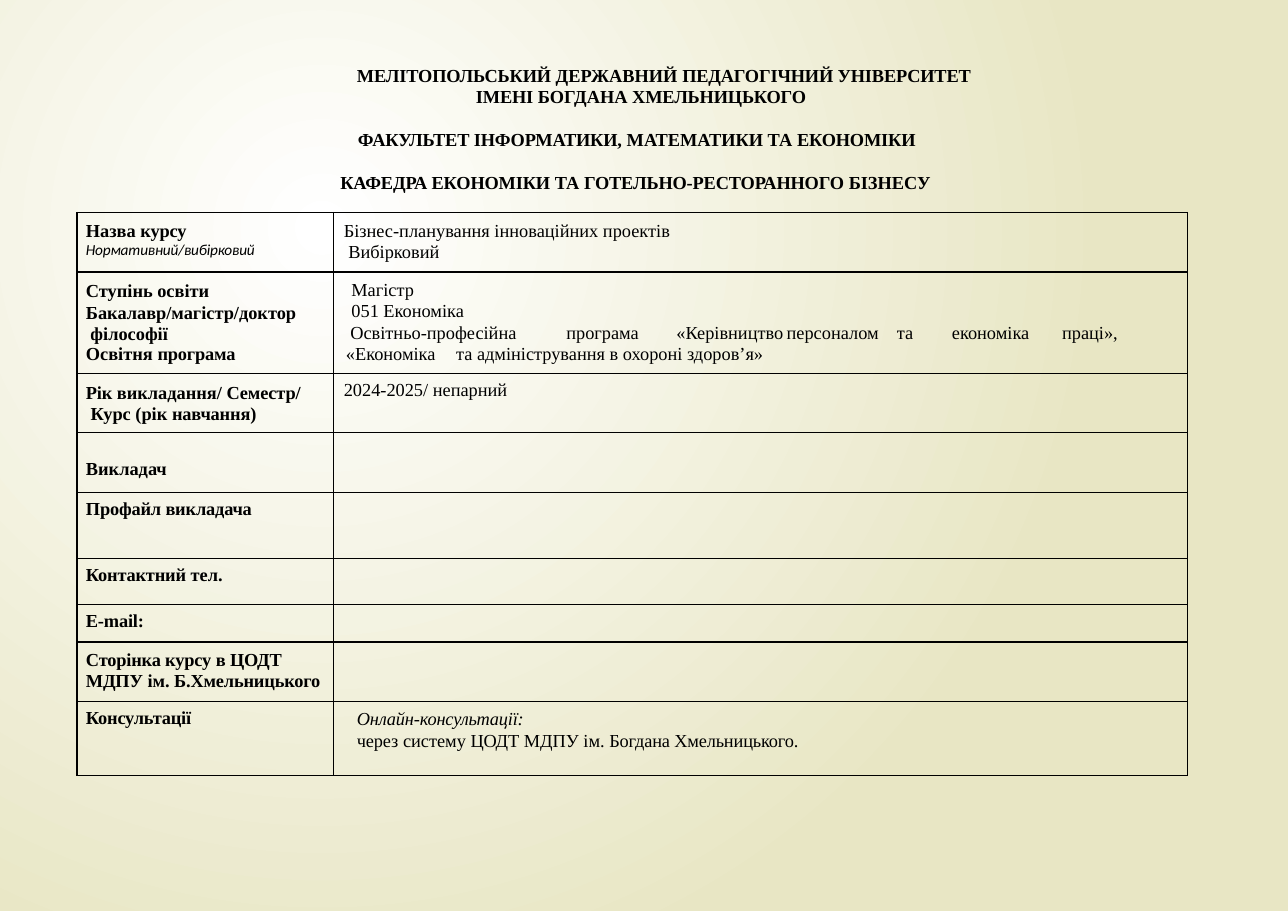
from lxml import etree
from pptx import Presentation
from pptx.dml.color import RGBColor
from pptx.oxml import parse_xml
from pptx.oxml.ns import nsdecls, qn
from pptx.util import Inches, Pt

BLACK = RGBColor(0, 0, 0)
CREAM = RGBColor(0xE8, 0xE6, 0xC4)
WHITE = RGBColor(0xFF, 0xFF, 0xFF)
SERIF, SANS = "Times New Roman", "Calibri"
WIDTH, HEIGHT = 11.69, 8.27
COLUMNS = (2.33, 7.75)
TAB_STEP = 0.55
TIGHT = -0.1


def para(*runs, left=0.08, first=0, line=None, before=0, size=12,
         font=SERIF, bold=False, italic=False, tabs=0):
    """Describe a paragraph; a run is a text or a (text, letter spacing) pair."""
    return dict(runs=runs, left=left, first=first, line=line, before=before,
                size=size, font=font, bold=bold, italic=italic, tabs=tabs)


def label(*runs, **kw):
    return para(*runs, bold=True, **kw)


HEADING = [
    label(("МЕЛІТОПОЛЬСЬКИЙ ", TIGHT), "ДЕРЖАВНИЙ ", ("ПЕДАГОГІЧНИЙ УНІВЕРСИТЕТ ІМЕНІ ", TIGHT),
          "БОГДАНА ", ("ХМЕЛЬНИЦЬКОГО", TIGHT), left=1.24, first=-1.08, line=13.8, before=1.9),
    label(("ФАКУЛЬТЕТ ІНФОРМАТИКИ, ", TIGHT), "МАТЕМАТИКИ ТА ",
          ("ЕКОНОМІКИ КАФЕДРА ЕКОНОМІКИ ", TIGHT), "ТА ", ("ГОТЕЛЬНО-РЕСТОРАННОГО ", TIGHT),
          "БІЗНЕСУ", left=0.01, first=0.16, line=27.6, before=0.8),
]

# Row height, then (top margin, paragraphs) for the label and the value.
ROWS = [
    (0.54,
     (0.06, [label("Назва ", ("курсу", TIGHT), line=14.3, before=4.5),
             para(("Нормативний/вибірковий", TIGHT), line=11.9, size=10, font=SANS, italic=True)]),
     (0.07, [para("Бізнес-планування інноваційних проектів\v Вибірковий",
                  left=0.09, line=13.8, before=5.2)])),
    (0.92,
     (0.08, [label("Ступінь освіти\vБакалавр/магістр/доктор\v філософії", line=13.8, before=5.5),
             label("Освітня ", ("програма", TIGHT), line=13.4)]),
     (0.06, [para("Магістр", left=0.16, line=14.1, before=4.3),
             para("051 Економіка", left=0.16, line=13.8),
             para("Освітньо-професійна\tпрограма\t«Керівництво\tперсоналом\tта\tекономіка\tпраці»,"
                  "\t«Економіка\tта адміністрування в охороні здоров’я»",
                  left=0.11, first=0.04, line=13.8, before=0.7, tabs=13)])),
    (0.54,
     (0.08, [label(("Рік ", TIGHT), "викладання/ ", ("Семестр/\v ", TIGHT), "Курс (рік ",
                   ("навчання)", TIGHT), line=13.8, before=5.5)]),
     (0.06, [para("2024-2025/ непарний", left=0.09, before=4.3)])),
    (0.54, (0.24, [label("Викладач")]), None),
    (0.6, (0.06, [label(("Профайл викладача", TIGHT), before=4.5)]), None),
    (0.42, (0.06, [label(("Контактний ", TIGHT), "тел.", before=4.5)]), None),
    (0.34, (0.06, [label(("E-mail:", TIGHT), before=4.5)]), None),
    (0.54,
     (0.06, [label(("Сторінка курсу ", TIGHT), "в", (" ЦОДТ", TIGHT), line=14.1, before=4.5),
             label(("МДПУ ", TIGHT), "ім.", (" Б.Хмельницького", TIGHT), line=14.1)]),
     None),
    (0.67,
     (0.06, [label(("Консультації", TIGHT), before=4.5)]),
     (0.06, [para(("Онлайн-консультації:", TIGHT), left=0.21, line=14.1, before=4.3, italic=True),
             para(("через", TIGHT), " систему ", ("ЦОДТ", TIGHT), " МДПУ ім.",
                  (" Богдана Хмельницького.", TIGHT), left=0.21, line=14.1)])),
]


def add_run(p, text, spacing, style):
    r = p.add_run()
    r.text = text
    r.font.name = style["font"]
    r.font.size = Pt(style["size"])
    r.font.bold = style["bold"]
    r.font.italic = style["italic"]
    r.font.color.rgb = BLACK
    if spacing:
        r._r.get_or_add_rPr().set("spc", str(round(spacing * 100)))


def write(tf, paras):
    for i, style in enumerate(paras):
        p = tf.paragraphs[0] if i == 0 else tf.add_paragraph()
        p.space_before = Pt(style["before"])
        if style["line"]:
            p.line_spacing = Pt(style["line"])
        pPr = p._p.get_or_add_pPr()
        pPr.set("marL", str(Inches(style["left"])))
        pPr.set("indent", str(Inches(style["first"])))
        if style["tabs"]:
            stops = etree.SubElement(pPr, qn("a:tabLst"))
            for n in range(1, style["tabs"] + 1):
                etree.SubElement(stops, qn("a:tab"), pos=str(Inches(n * TAB_STEP)), algn="l")
        for run in style["runs"]:
            text, spacing = (run, 0) if isinstance(run, str) else run
            for k, part in enumerate(text.split("\v")):
                if k:
                    p.add_line_break()
                add_run(p, part, spacing, style)


def add_background(slide):
    """Radial gradient, white at the upper left."""
    slide._element.cSld.insert(0, parse_xml(
        f'<p:bg {nsdecls("p", "a")}><p:bgPr><a:gradFill rotWithShape="1"><a:gsLst>'
        f'<a:gs pos="0"><a:srgbClr val="{WHITE}"/></a:gs>'
        f'<a:gs pos="100000"><a:srgbClr val="{CREAM}"/></a:gs></a:gsLst>'
        '<a:path path="circle"><a:fillToRect l="50000" t="50000" r="100000" b="100000"/></a:path>'
        '</a:gradFill><a:effectLst/></p:bgPr></p:bg>'))


def add_heading(slide, x, y, w, h):
    tf = slide.shapes.add_textbox(*map(Inches, (x, y, w, h))).text_frame
    tf.word_wrap = True
    tf.margin_left = tf.margin_right = tf.margin_bottom = 0
    tf.margin_top = Inches(0.03)
    write(tf, HEADING)


def style_cell(cell, top):
    cell.margin_left = cell.margin_right = cell.margin_bottom = 0
    cell.margin_top = Inches(top)
    tcPr = cell._tc.get_or_add_tcPr()
    for side in ("lnL", "lnR", "lnT", "lnB"):
        tcPr.append(parse_xml(
            f'<a:{side} {nsdecls("a")} w="{Pt(1)}"><a:solidFill><a:srgbClr val="{BLACK}"/>'
            f'</a:solidFill></a:{side}>'))
    cell.fill.background()


def add_course_table(slide, x, y, w, h):
    table = slide.shapes.add_table(len(ROWS), len(COLUMNS), *map(Inches, (x, y, w, h))).table
    table.first_row = table.horz_banding = False
    for column, width in zip(table.columns, COLUMNS):
        column.width = Inches(width)
    for row, (height, *contents) in zip(table.rows, ROWS):
        row.height = Inches(height)
        for cell, content in zip(row.cells, contents):
            top, paras = content or (0, [])
            style_cell(cell, top)
            write(cell.text_frame, paras)


def main():
    prs = Presentation()
    prs.slide_width, prs.slide_height = Inches(WIDTH), Inches(HEIGHT)
    slide = prs.slides.add_slide(prs.slide_layouts[6])
    add_background(slide)
    add_heading(slide, 3.08, 0.56, 5.83, 1.19)
    add_course_table(slide, 0.7, 1.93, sum(COLUMNS), sum(row[0] for row in ROWS))
    prs.save("out.pptx")


if __name__ == "__main__":
    main()
